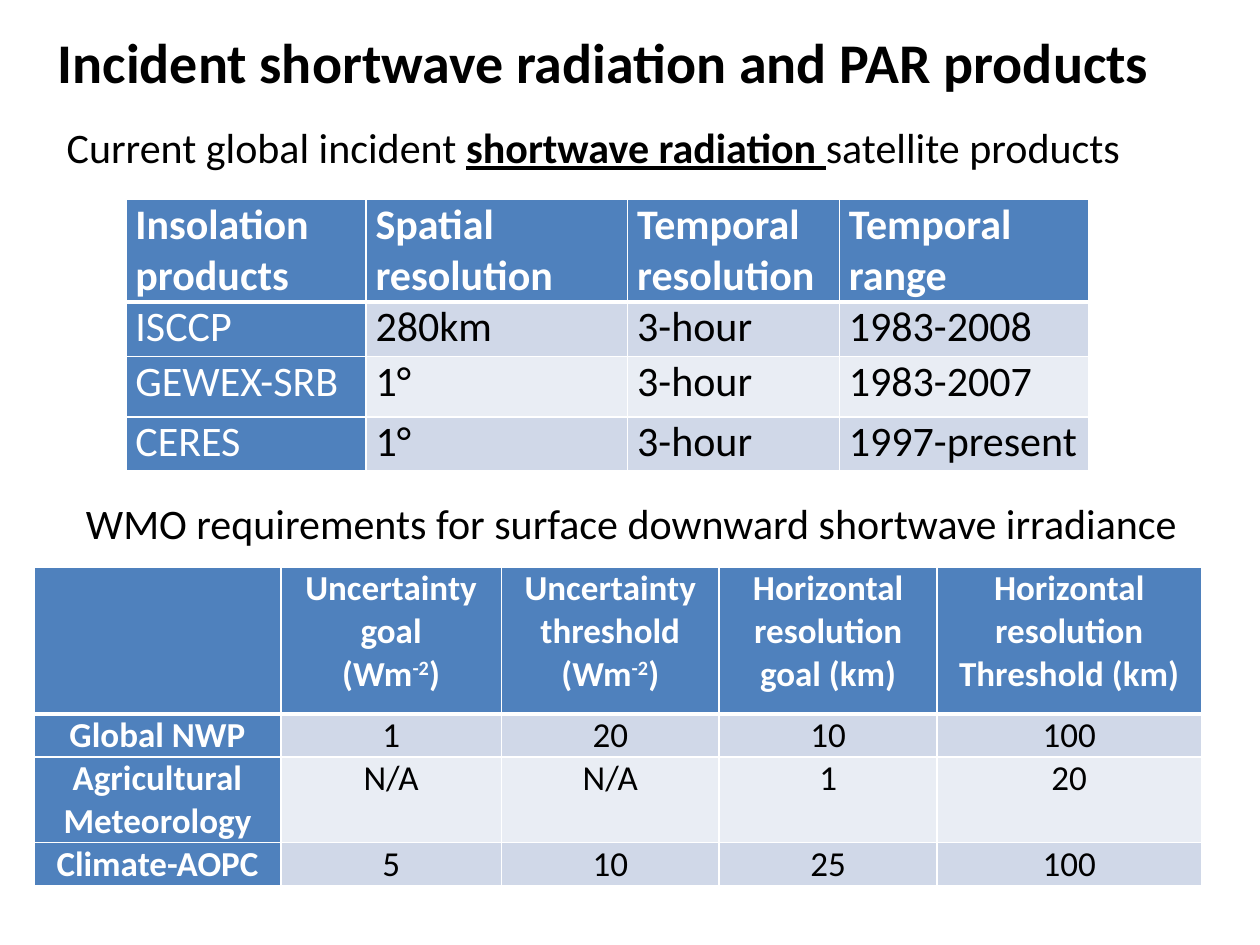
"""Build a slide of incident shortwave radiation and PAR product tables."""
import pptx
import pptx.dml.color
import pptx.enum.text
import pptx.util
from lxml import etree
from pptx.oxml.ns import qn

Pt = pptx.util.Pt
RGBColor = pptx.dml.color.RGBColor
PP_ALIGN = pptx.enum.text.PP_ALIGN

BLACK = RGBColor(0x00, 0x00, 0x00)
WHITE = RGBColor(0xFF, 0xFF, 0xFF)
BLUE = RGBColor(0x4F, 0x81, 0xBD)
BANDS = [RGBColor(0xE9, 0xED, 0xF4), RGBColor(0xD0, 0xD8, 0xE8)]


def write(tf, text, size=24, color=BLACK, bold=False, align=PP_ALIGN.LEFT, accent=None):
    """Write lines of text; parts between bars take the accent."""
    for i, line in enumerate(text.split("\n")):
        p = tf.add_paragraph() if i else tf.paragraphs[0]
        p.alignment = align
        for j, part in enumerate(line.split("|")):
            r = p.add_run()
            r.text = part
            r.font.name = "Calibri"
            r.font.size = Pt(size)
            r.font.color.rgb = color
            r.font.bold = bold
            if j % 2 and accent == "super":
                r._r.get_or_add_rPr().set("baseline", "30000")
            elif j % 2:
                r.font.bold = r.font.underline = True


def add_border(cell, side, width):
    ln = etree.SubElement(cell._tc.get_or_add_tcPr(), qn(f"a:ln{side}"), w=str(Pt(width)))
    fill = etree.SubElement(ln, qn("a:solidFill"))
    etree.SubElement(fill, qn("a:srgbClr"), val=str(WHITE))


prs = pptx.Presentation()
prs.slide_width, prs.slide_height = Pt(720), Pt(540)
s = prs.slides.add_slide(prs.slide_layouts[6])

irradiance_rows = [
    ["", "Uncertainty goal\n(Wm|-2|)", "Uncertainty threshold\n(Wm|-2|)",
     "Horizontal resolution goal (km)", "Horizontal resolution\nThreshold (km)"],
    ["Global NWP", "1", "20", "10", "100"],
    ["Agricultural Meteorology", "N/A", "N/A", "1", "20"],
    ["Climate-AOPC", "5", "10", "25", "100"],
]
insolation_rows = [
    ["Insolation products", "Spatial resolution", "Temporal resolution", "Temporal range"],
    ["ISCCP", "280km", "3-hour", "1983-2008"],
    ["GEWEX-SRB", "1°", "3-hour", "1983-2007"],
    ["CERES", "1°", "3-hour", "1997-present"],
]
tables = [
    (irradiance_rows, 19.5, 324, [141, 126, 124.5, 124.5, 151], [84, 24.4, 48.8, 24.4],
     20, PP_ALIGN.CENTER, True),
    (insolation_rows, 72, 114, [137.2, 149.5, 121, 142.3], [57.6, 31, 34.6, 31],
     24, PP_ALIGN.JUSTIFY, False),
]
for rows, left, top, widths, heights, size, align, bold_names in tables:
    table = s.shapes.add_table(len(rows), len(widths), Pt(left), Pt(top),
                               Pt(sum(widths)), Pt(sum(heights))).table
    for column, width in zip(table.columns, widths):
        column.width = Pt(width)
    for i, values in enumerate(rows):
        table.rows[i].height = Pt(heights[i])
        for j, value in enumerate(values):
            cell = table.cell(i, j)
            cell.margin_left = cell.margin_right = Pt(5.4)
            cell.margin_top = cell.margin_bottom = 0
            for side in "LRTB":
                add_border(cell, side, 3 if (i, side) in [(0, "B"), (1, "T")] else 1)
            heading = i == 0 or j == 0
            cell.fill.solid()
            cell.fill.fore_color.rgb = BLUE if heading else BANDS[i % 2]
            if value:
                write(cell.text_frame, value, size=size, align=align, accent="super",
                      color=WHITE if heading else BLACK,
                      bold=i == 0 or (j == 0 and bold_names))

texts = [
    ("Incident shortwave radiation and PAR products", 12, 12, 666, 46, True,
     dict(size=32, bold=True, align=PP_ALIGN.CENTER)),
    ("WMO requirements for surface downward shortwave irradiance", 42, 281, 686, 36, True, {}),
    ("Current global incident |shortwave radiation |satellite products", 31, 66, 622, 36, False,
     dict(accent="underline")),
]
for text, left, top, width, height, wrap, style in texts:
    tf = s.shapes.add_textbox(Pt(left), Pt(top), Pt(width), Pt(height)).text_frame
    tf.word_wrap = wrap
    tf.auto_size = pptx.enum.text.MSO_AUTO_SIZE.SHAPE_TO_FIT_TEXT
    write(tf, text, **style)

prs.save("out.pptx")
